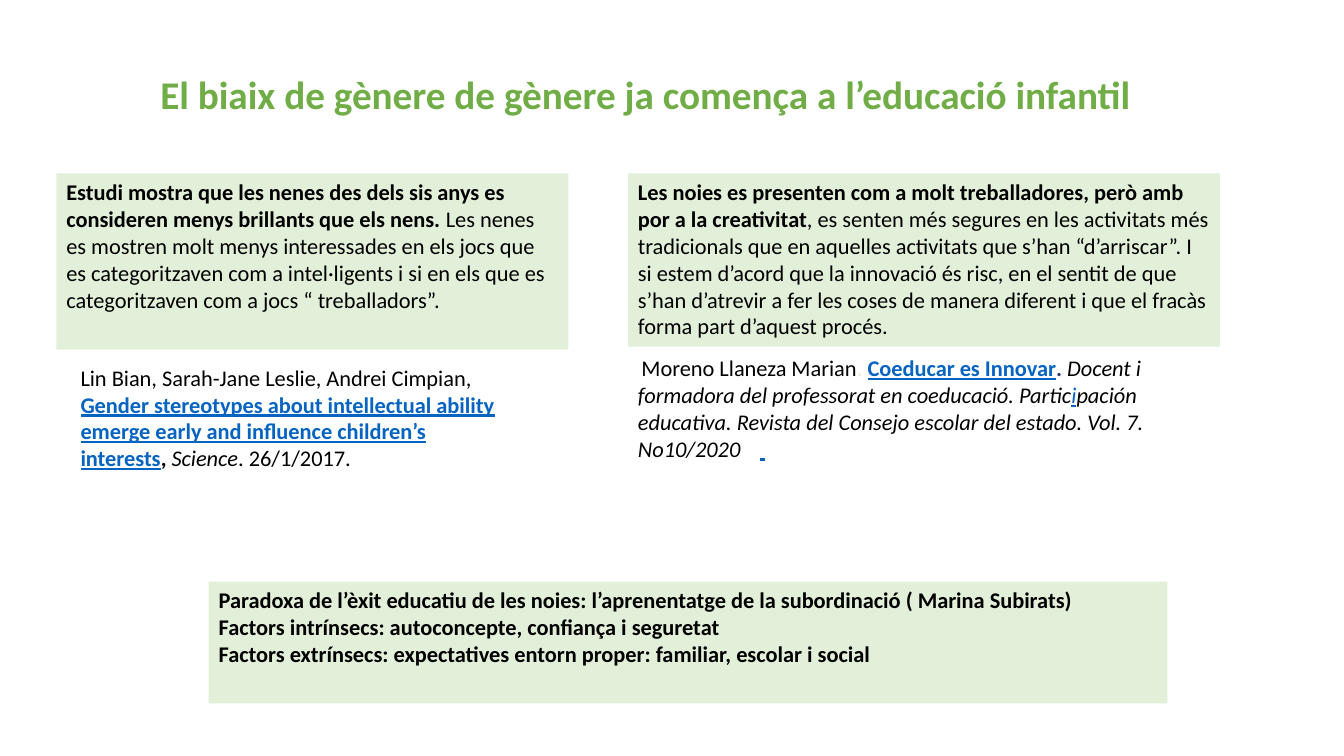
import lxml.etree
import pptx
import pptx.dml.color
import pptx.enum.shapes
import pptx.enum.text
import pptx.oxml.ns
import pptx.util

WIDTH = pptx.util.Inches(13.33)
HEIGHT = pptx.util.Inches(7.5)
LEFT_COLUMN, RIGHT_COLUMN = 4.2, 46.73
CITATION_COLUMN = 5.25
PANEL_ROW = 22.93
PANEL_FILL = "E2F0D9"
MARK_TAB = pptx.util.Inches(1.21)

PLAIN = {}
BOLD = {"bold": True}
ITALIC = {"italic": True}
LINK = {"bold": True, "underline": True, "color": "0563C1"}
LINK_LETTER = {"italic": True, "underline": True, "color": "0563C1"}
TITLE = {"bold": True, "size": 28, "color": "70AD47"}

GIRLS_STUDY = [[
    ("Estudi mostra que les nenes des dels sis anys es consideren menys brillants que els nens.", BOLD),
    (" Les nenes es mostren molt menys interessades en els jocs que es categoritzaven com a "
     "intel·ligents i si en els que es categoritzaven com a jocs “ treballadors”.", PLAIN),
]]
GIRLS_CITATION = [[
    ("Lin Bian, Sarah-Jane Leslie, Andrei Cimpian, ", PLAIN),
    ("Gender stereotypes about intellectual ability emerge early and influence children’s interests", LINK),
    (", ", BOLD),
    ("Science", ITALIC),
    (". 26/1/2017.", PLAIN),
]]
CREATIVITY_STUDY = [[
    ("Les noies es presenten com a molt treballadores, però amb por a la creativitat", BOLD),
    (", es senten més segures en les activitats més tradicionals que en aquelles activitats que "
     "s’han “d’arriscar”. I si estem d’acord que la innovació és risc, en el sentit de que s’han "
     "d’atrevir a fer les coses de manera diferent i que el fracàs forma part d’aquest procés.", PLAIN),
]]
CREATIVITY_CITATION = [[
    (" ", {"size": 11}),
    ("Moreno Llaneza Marian", PLAIN),
    (". ", {"color": PANEL_FILL}),
    ("Coeducar es Innovar", LINK),
    (". ", {"bold": True, "color": "25417A"}),
    ("Docent i formadora del professorat en coeducació. Partic", ITALIC),
    ("i", LINK_LETTER),
    ("pación educativa. Revista del Consejo escolar del estado. Vol. 7. No10/2020\t", ITALIC),
    (" ", LINK_LETTER),
]]
PARADOX = [
    [("Paradoxa de l’èxit educatiu de les noies: l’aprenentatge de la subordinació ( Marina Subirats)", BOLD)],
    [("Factors intrínsecs: autoconcepte, confiança i seguretat", BOLD)],
    [("Factors extrínsecs: expectatives entorn proper: familiar, escolar i social", BOLD)],
]


def rgb(value):
    """Turn a hex string into a colour."""
    return pptx.dml.color.RGBColor.from_string(value)


def place(left, top, width, height):
    """Turn percentages of the slide into lengths."""
    shares = ((left, WIDTH), (top, HEIGHT), (width, WIDTH), (height, HEIGHT))
    return [round(share * total / 100) for share, total in shares]


def add_run(paragraph, text, bold=False, italic=False, underline=False, size=16, color="000000"):
    """Append one formatted run to a paragraph."""
    run = paragraph.add_run()
    run.text = text
    font = run.font
    font.name = "Calibri"
    font.size = pptx.util.Pt(size)
    font.bold, font.italic, font.underline = bold, italic, underline
    font.color.rgb = rgb(color)


def add_tab_stop(paragraph, position):
    """Give a paragraph one left tab stop."""
    properties = paragraph._p.get_or_add_pPr()
    tab_list = lxml.etree.SubElement(properties, pptx.oxml.ns.qn("a:tabLst"))
    lxml.etree.SubElement(tab_list, pptx.oxml.ns.qn("a:tab"), pos=str(position), algn="l")


def write(shape, paragraphs, alignment=pptx.enum.text.PP_ALIGN.LEFT, tab=None):
    """Fill a shape with paragraphs made of styled runs."""
    text_frame = shape.text_frame
    text_frame.word_wrap = True
    text_frame.vertical_anchor = pptx.enum.text.MSO_ANCHOR.TOP
    for index, runs in enumerate(paragraphs):
        paragraph = text_frame.add_paragraph() if index else text_frame.paragraphs[0]
        paragraph.alignment = alignment
        if tab:
            add_tab_stop(paragraph, tab)
        for text, style in runs:
            add_run(paragraph, text, **style)


def add_panel(slide, area, paragraphs):
    """Add a green panel with text."""
    panel = slide.shapes.add_shape(pptx.enum.shapes.MSO_SHAPE.RECTANGLE, *place(*area))
    panel.shadow.inherit = False
    panel.fill.solid()
    panel.fill.fore_color.rgb = rgb(PANEL_FILL)
    panel.line.fill.background()
    write(panel, paragraphs)


def add_text(slide, area, paragraphs, **layout):
    """Add a text box without fill."""
    write(slide.shapes.add_textbox(*place(*area)), paragraphs, **layout)


def main():
    """Build the slide and save it."""
    presentation = pptx.Presentation()
    presentation.slide_width, presentation.slide_height = WIDTH, HEIGHT
    slide = presentation.slides.add_slide(presentation.slide_layouts[6])
    add_text(slide, (CITATION_COLUMN, 8.67, 85.5, 7.6),
             [[("El biaix de gènere de gènere ja comença a l’educació infantil", TITLE)]],
             alignment=pptx.enum.text.PP_ALIGN.CENTER)
    add_panel(slide, (LEFT_COLUMN, PANEL_ROW, 38.1, 23.33), GIRLS_STUDY)
    add_text(slide, (CITATION_COLUMN, 47.47, 33.3, 25), GIRLS_CITATION)
    add_panel(slide, (RIGHT_COLUMN, PANEL_ROW, 44.03, 22.93), CREATIVITY_STUDY)
    add_text(slide, (RIGHT_COLUMN, 46.2, 41.7, 19.8), CREATIVITY_CITATION, tab=MARK_TAB)
    add_panel(slide, (15.53, 76.93, 71.33, 16.13), PARADOX)
    presentation.save("out.pptx")


if __name__ == "__main__":
    main()
